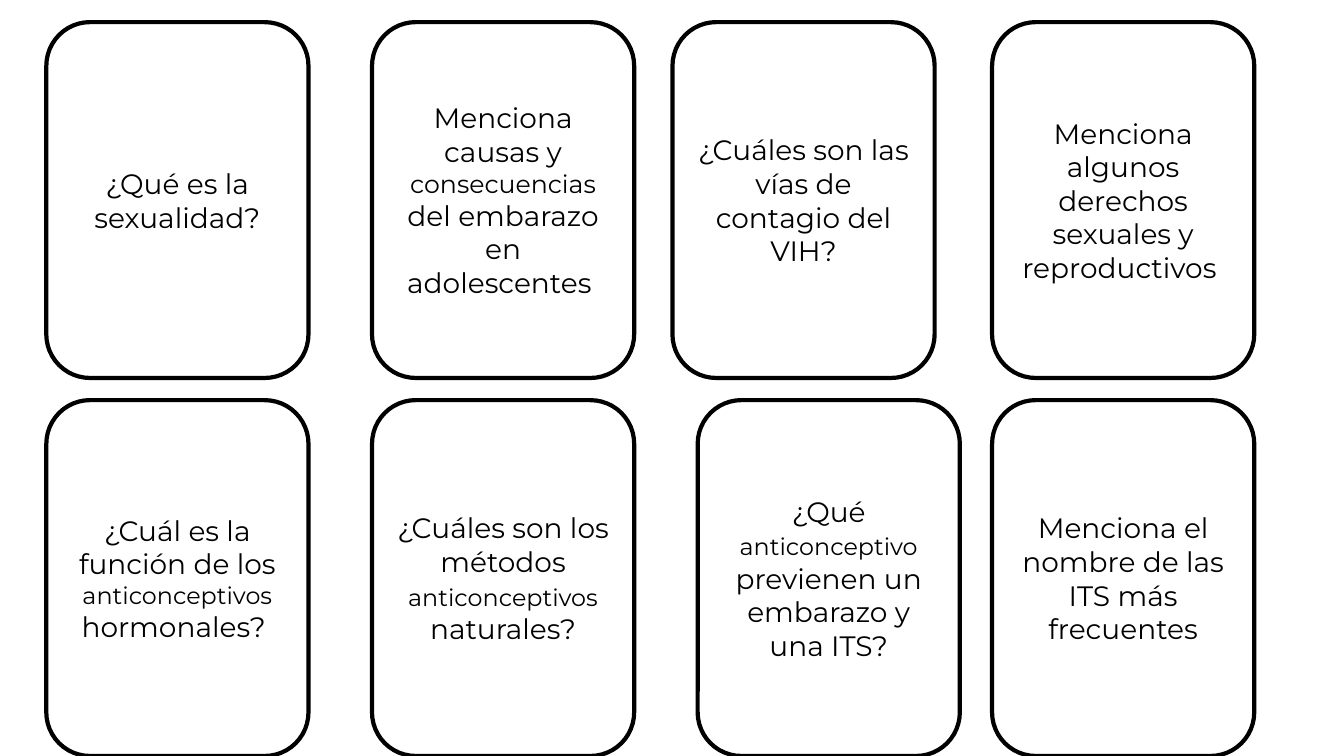
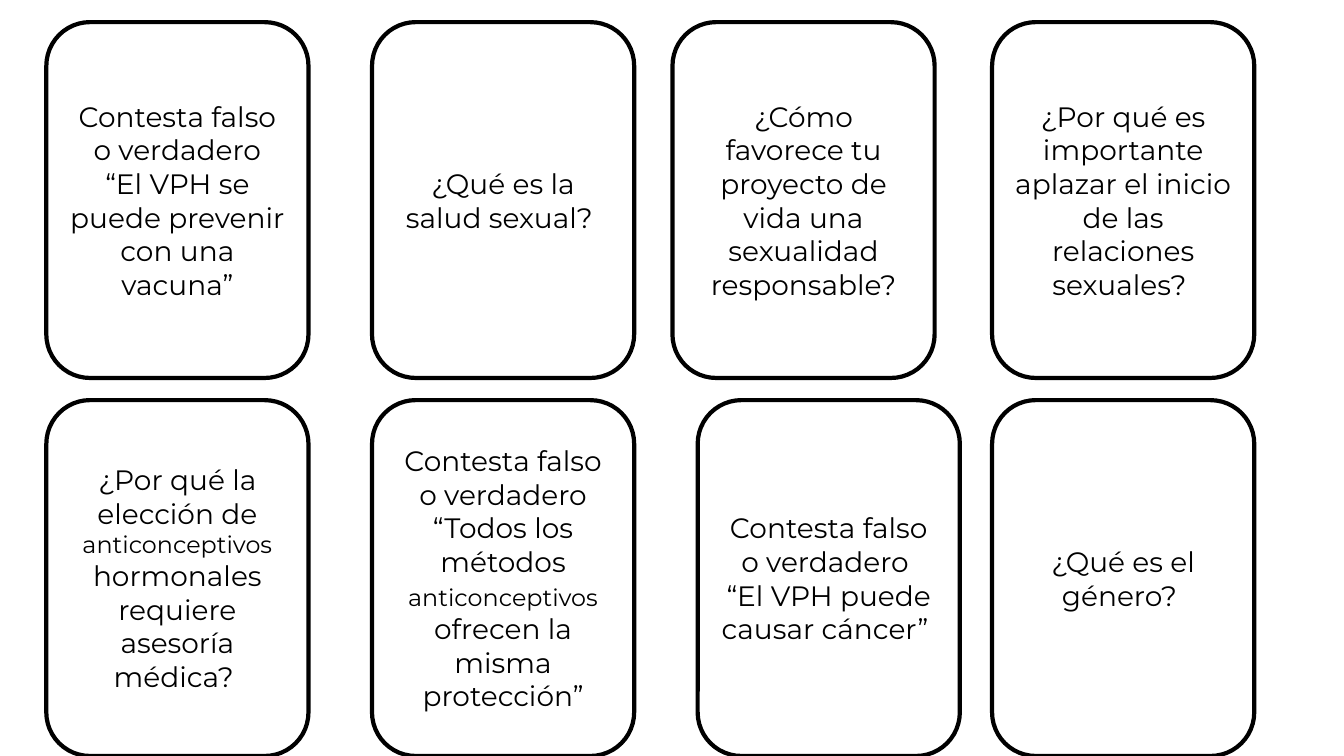
from dataclasses import dataclass

from pptx import Presentation
from pptx.dml.color import RGBColor
from pptx.enum.shapes import MSO_SHAPE
from pptx.enum.text import MSO_ANCHOR, PP_ALIGN
from pptx.slide import Slide
from pptx.text.text import TextFrame
from pptx.util import Inches, Pt

# Shared style
FONT = "Montserrat"
INK = "000000"
TEXT_SIZE = 20
OUTLINE_WIDTH = 3
CARD_WIDTH, CARD_HEIGHT = 2.6, 3.53

# Card grid: top edge and left edges of each row
ROWS = [
    (0.22, [0.46, 3.69, 6.67, 9.84]),
    (3.97, [0.46, 3.69, 6.92, 9.84]),
]


@dataclass(frozen=True)
class Span:
    text: str
    size: int = TEXT_SIZE


@dataclass(frozen=True)
class Card:
    paragraphs: list[list[Span]]


def plain(*lines: str) -> Card:
    """A card whose paragraphs all use the standard size."""
    return Card([[Span(line)] for line in lines])


def mixed(before: str, long_word: str, after: str, size: int = 17) -> Card:
    """A card with one long word set smaller so that it fits the line."""
    return Card([[Span(before), Span(long_word, size), Span(after)]])


# Cards of each slide, row by row
SLIDES = [
    [
        plain("¿Qué es la sexualidad?"),
        mixed("Menciona causas y ", "consecuencias ",
              "del embarazo en adolescentes ", 18),
        plain("¿Cuáles son las vías de contagio del VIH?"),
        plain("Menciona algunos derechos sexuales y reproductivos "),
        mixed("¿Cuál es la función de los ", "anticonceptivos ", "hormonales? "),
        mixed("¿Cuáles son los métodos ", "anticonceptivos", " naturales?"),
        mixed("¿Qué ", "anticonceptivo", " previenen un embarazo y una ITS?"),
        plain("Menciona el nombre de las ITS más frecuentes"),
    ],
    [
        plain("Contesta falso o verdadero",
              "“El VPH se puede prevenir con una vacuna”"),
        plain("¿Qué es la salud sexual? "),
        plain("¿Cómo favorece tu proyecto de vida una sexualidad responsable?"),
        plain("¿Por qué es importante aplazar el inicio de las relaciones sexuales? "),
        mixed("¿Por qué la elección de ", "anticonceptivos ",
              "hormonales requiere asesoría médica? "),
        mixed("Contesta falso o verdadero “Todos los métodos ",
              "anticonceptivos", " ofrecen la misma protección”"),
        plain("Contesta falso o verdadero ", "“El VPH puede causar cáncer” "),
        plain("¿Qué es el género? "),
    ],
]


def color(value: str) -> RGBColor:
    return RGBColor.from_string(value)


def write_text(frame: TextFrame, card: Card) -> None:
    frame.word_wrap = True
    frame.vertical_anchor = MSO_ANCHOR.MIDDLE
    for index, spans in enumerate(card.paragraphs):
        para = frame.add_paragraph() if index else frame.paragraphs[0]
        para.alignment = PP_ALIGN.CENTER
        para.font.name = FONT
        para.font.size = Pt(TEXT_SIZE)
        para.font.color.rgb = color(INK)
        for span in spans:
            run = para.add_run()
            run.text = span.text
            if span.size != TEXT_SIZE:
                run.font.size = Pt(span.size)


def draw_card(page: Slide, card: Card, left: float, top: float) -> None:
    box = page.shapes.add_shape(
        MSO_SHAPE.ROUNDED_RECTANGLE, Inches(left), Inches(top),
        Inches(CARD_WIDTH), Inches(CARD_HEIGHT))
    box.shadow.inherit = False
    box.fill.background()
    box.line.color.rgb = color(INK)
    box.line.width = Pt(OUTLINE_WIDTH)
    write_text(box.text_frame, card)


def main() -> None:
    deck = Presentation()
    deck.slide_width, deck.slide_height = Inches(13.33), Inches(7.5)
    places = [(left, top) for top, lefts in ROWS for left in lefts]
    for cards in SLIDES:
        page = deck.slides.add_slide(deck.slide_layouts[6])
        for card, (left, top) in zip(cards, places):
            draw_card(page, card, left, top)
    deck.save("out.pptx")


if __name__ == "__main__":
    main()
